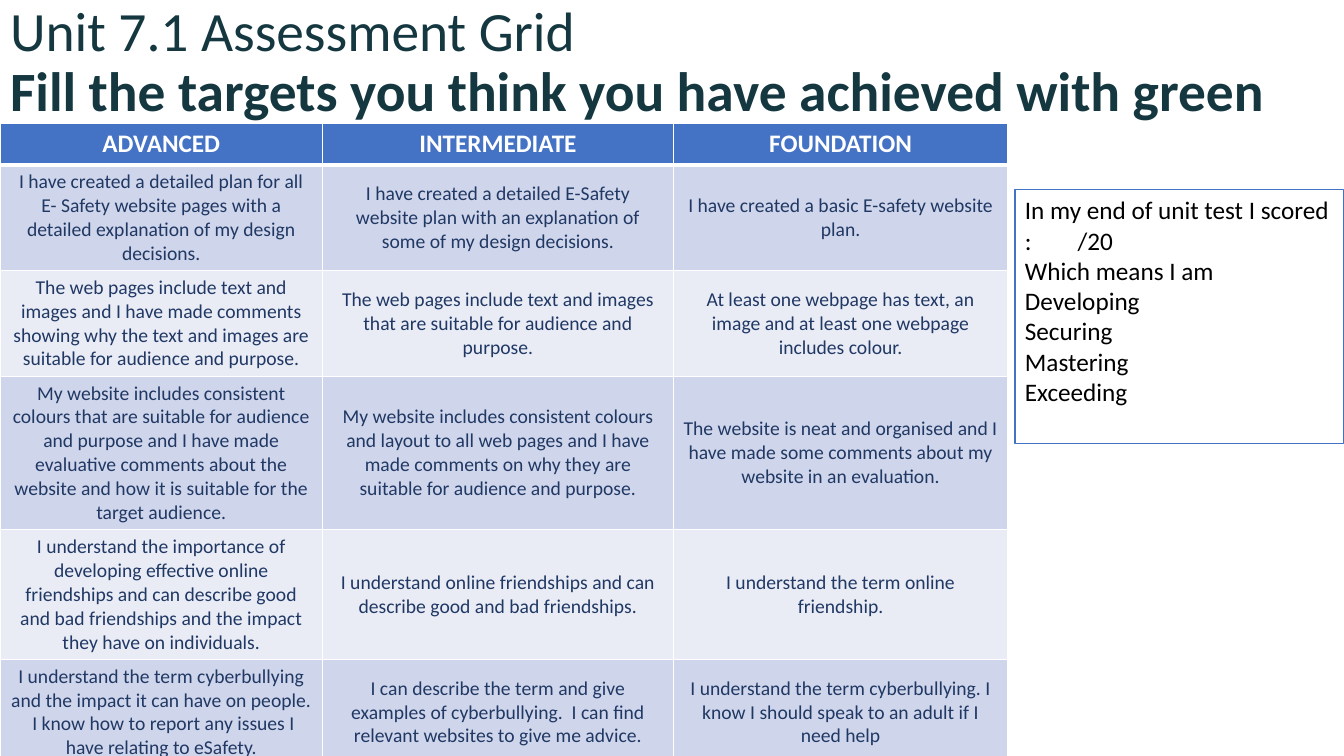
from dataclasses import dataclass

from lxml.etree import SubElement
from pptx import Presentation
from pptx.dml.color import RGBColor as RGB
from pptx.enum.shapes import MSO_SHAPE as SHAPE
from pptx.enum.text import MSO_ANCHOR as ANCHOR, MSO_AUTO_SIZE as FIT, PP_ALIGN as ALIGN
from pptx.oxml.ns import qn
from pptx.util import Cm, Pt


@dataclass(frozen=True)
class Theme:
    font: str = "Calibri"
    title: str = "143740"
    header: str = "4472C4"
    bands: tuple = ("CFD5EA", "E9EBF5")
    body: str = "203864"
    white: str = "FFFFFF"
    black: str = "000000"
    title_size: float = 39.6
    large: float = 18
    small: float = 14


THEME = Theme()
COLUMN_WIDTHS = (8.13, 8.84, 8.43)
ROW_HEIGHTS = (1.04, 2.66, 2.66, 3.87, 3.27, 2.66)
TARGETS = (
    ("ADVANCED", "INTERMEDIATE", "FOUNDATION"),
    ("I have created a detailed plan for all E- Safety website pages with a detailed explanation of my design decisions.",
     "I have created a detailed E-Safety website plan with an explanation of some of my design decisions.",
     "I have created a basic E-safety website plan."),
    ("The web pages include text and images and I have made comments showing why the text and images are suitable for audience and purpose.",
     "The web pages include text and images that are suitable for audience and purpose.",
     "At least one webpage has text, an image and at least one webpage includes colour."),
    ("My website includes consistent colours that are suitable for audience and purpose and I have made evaluative comments about the website and how it is suitable for the target audience.",
     "My website includes consistent colours and layout to all web pages and I have made comments on why they are suitable for audience and purpose.",
     "The website is neat and organised and I have made some comments about my website in an evaluation."),
    ("I understand the importance of developing effective online friendships and can describe good and bad friendships and the impact they have on individuals.",
     "I understand online friendships and can describe good and bad friendships.",
     "I understand the term online friendship."),
    ("I understand the term cyberbullying and the impact it can have on people.  I know how to report any issues I have relating to eSafety.",
     "I can describe the term and give examples of cyberbullying.  I can find relevant websites to give me advice.",
     "I understand the term cyberbullying. I know I should speak to an adult if I need help"),
)
SCORE_LINES = ("In my end of unit test I scored", ":\t/20", "Which means I am",
               "Developing", "Securing", "Mastering", "Exceeding")


def add_run(p, text, size, color, bold=False):
    r = p.add_run()
    r.text = text
    r.font.name = THEME.font
    r.font.size = Pt(size)
    r.font.bold = bold
    r.font.color.rgb = RGB.from_string(color)


def set_borders(cell, bottom):
    tc_pr = cell._tc.get_or_add_tcPr()
    widths = {"a:lnL": 1, "a:lnR": 1, "a:lnT": 1, "a:lnB": bottom}
    for index, (tag, width) in enumerate(widths.items()):
        ln = SubElement(tc_pr, qn(tag), w=str(Pt(width)))
        fill = SubElement(ln, qn("a:solidFill"))
        SubElement(fill, qn("a:srgbClr"), val=THEME.white)
        tc_pr.insert(index, ln)


def add_title(s, left, top, width, height):
    title = s.shapes.title
    title.left, title.top, title.width, title.height = map(Cm, (left, top, width, height))
    tf = title.text_frame
    tf.word_wrap = True
    tf.auto_size = FIT.NONE
    tf.vertical_anchor = ANCHOR.MIDDLE
    p = tf.paragraphs[0]
    p.alignment = ALIGN.LEFT
    p.line_spacing = 0.9
    add_run(p, "Unit 7.1 Assessment Grid", THEME.title_size, THEME.title)
    p.add_line_break()
    add_run(p, "Fill the targets you think you have achieved with green",
            THEME.title_size, THEME.title, True)


def add_targets(s, left, top):
    frame = s.shapes.add_table(len(ROW_HEIGHTS), len(COLUMN_WIDTHS), Cm(left), Cm(top),
                               Cm(sum(COLUMN_WIDTHS)), Cm(sum(ROW_HEIGHTS)))
    table = frame.table
    for column, width in zip(table.columns, COLUMN_WIDTHS):
        column.width = Cm(width)
    for i, (row, height, texts) in enumerate(zip(table.rows, ROW_HEIGHTS, TARGETS)):
        row.height = Cm(height)
        is_header = i == 0
        fill = THEME.header if is_header else THEME.bands[(i - 1) % 2]
        size = THEME.large if is_header else THEME.small
        color = THEME.white if is_header else THEME.body
        for cell, text in zip(row.cells, texts):
            cell.fill.solid()
            cell.fill.fore_color.rgb = RGB.from_string(fill)
            cell.vertical_anchor = ANCHOR.TOP if is_header else ANCHOR.MIDDLE
            set_borders(cell, 3 if is_header else 1)
            p = cell.text_frame.paragraphs[0]
            p.alignment = ALIGN.CENTER
            add_run(p, text, size, color, is_header)


def add_score(s, left, top, width, height):
    sp = s.shapes.add_shape(SHAPE.RECTANGLE, *map(Cm, (left, top, width, height)))
    sp.shadow.inherit = False
    sp.fill.background()
    sp.line.color.rgb = RGB.from_string(THEME.header)
    sp.line.width = Pt(0.75)
    tf = sp.text_frame
    tf.word_wrap = True
    tf.vertical_anchor = ANCHOR.TOP
    for i, text in enumerate(SCORE_LINES):
        p = tf.add_paragraph() if i else tf.paragraphs[0]
        p.alignment = ALIGN.LEFT
        if "\t" in text:
            tabs = SubElement(p._p.get_or_add_pPr(), qn("a:tabLst"))
            SubElement(tabs, qn("a:tab"), pos=str(Cm(1.33)), algn="l")
        add_run(p, text, THEME.large, THEME.black)


def main():
    prs = Presentation()
    prs.slide_width, prs.slide_height = Cm(33.87), Cm(19.05)
    s = prs.slides.add_slide(prs.slide_layouts[5])
    add_title(s, 0, 0.71, 32.97, 1.8)
    add_targets(s, 0, 3.12)
    add_score(s, 25.58, 4.78, 8.28, 6.4)
    prs.save("out.pptx")


if __name__ == "__main__":
    main()
